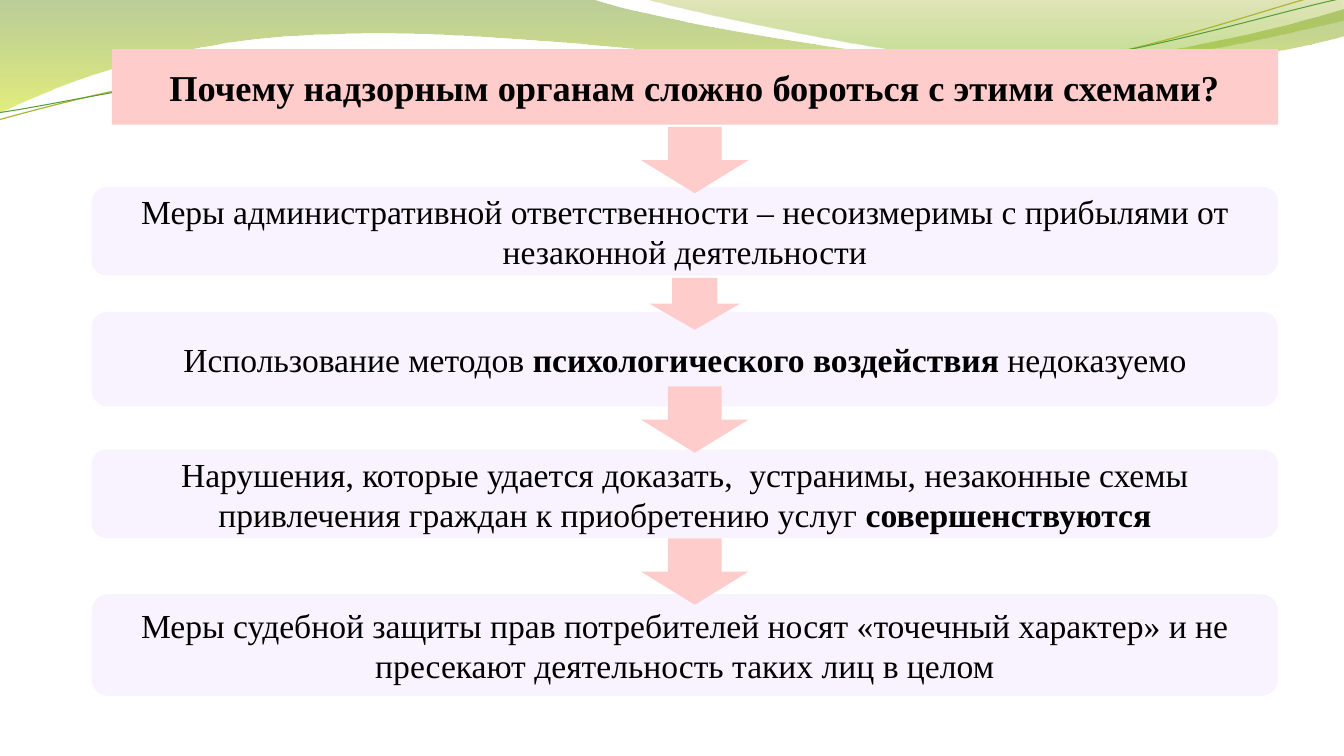
from dataclasses import dataclass

from lxml.etree import SubElement
from pptx import Presentation
from pptx.dml.color import RGBColor
from pptx.enum.shapes import MSO_SHAPE as Preset
from pptx.enum.text import MSO_ANCHOR as Anchor, PP_ALIGN as Align
from pptx.oxml.ns import qn
from pptx.shapes.autoshape import Shape
from pptx.slide import Slide
from pptx.util import Cm, Pt

COLORS = {
    "pink": "FFCCCC",
    "lilac": "F9F3FF",
    "text": "000000",
    "moss": "69921C",
    "lime": "CCE10F",
    "olive": "9BAA1A",
    "grass": "81BA16",
    "khaki_line": "A9B733",
    "green_line": "549E39",
}
FONT = "Times New Roman"
REASON_LEFT, REASON_WIDTH = 2.31, 29.9
ARROW_CENTER = 17.51

Point = tuple[float, float]
Segment = tuple[Point, ...]


@dataclass(frozen=True)
class Stop:
    color: str
    position: float
    opacity: int


@dataclass(frozen=True)
class Wave:
    """Outline in cm: one point makes a straight segment, three a cubic one."""
    start: Point
    segments: tuple[Segment, ...]
    stops: tuple[Stop, ...] = ()
    line: str = ""
    line_width: float = 0


@dataclass(frozen=True)
class Reason:
    """Runs alternate between regular and bold."""
    top: float
    height: float
    runs: tuple[str, ...]


@dataclass(frozen=True)
class Arrow:
    top: float
    width: float = 2.71
    height: float = 1.67


WAVES = (
    Wave((-0.05, 0), (
        ((14.91, -0.03),),
        ((16.1, 0.43), (22.45, 1.6), (25.68, 1.6)),
        ((28.88, 1.6), (32.44, 0.66), (33.87, 0.23)),
        ((33.88, 0.91),),
        ((33.3, 1.12), (29.44, 1.93), (25.25, 1.91)),
        ((21.06, 1.91), (12.93, 0.71), (8.71, 0.86)),
        ((4.37, 0.91), (1.55, 2.11), (-0.05, 2.87)),
    ), stops=(Stop("moss", 0, 45), Stop("lime", 1, 55))),
    Wave((16.2, -0.03), (
        ((17.25, 0.28), (23.09, 1.57), (26.04, 1.65)),
        ((28.96, 1.75), (32.56, 0.81), (33.87, 0.53)),
        ((33.87, 0),),
    ), stops=(Stop("olive", 0, 30), Stop("grass", 0.8, 45))),
    Wave((-0.03, 3.02), (
        ((1.6, 2.57), (5.33, 1.57), (9.37, 1.4)),
        ((13.39, 1.22), (20.04, 2.21), (24.1, 1.93)),
        ((28.19, 1.68), (31.78, 0.2), (33.78, -0.25)),
    ), line="khaki_line", line_width=0.85),
    Wave((-0.03, 2.84), (
        ((1.57, 2.62), (5.54, 1.68), (9.58, 1.5)),
        ((13.64, 1.35), (20.22, 2.08), (24.26, 1.83)),
        ((28.3, 1.57), (31.88, 0.36), (33.87, -0.05)),
    ), line="green_line", line_width=0.75),
)
REASONS = (
    Reason(4.72, 2.22, (
        "Меры административной ответственности – несоизмеримы с прибылями от "
        "незаконной деятельности",)),
    Reason(7.86, 2.38, (
        "Использование методов ", "психологического воздействия ", "недоказуемо")),
    Reason(11.33, 2.23, (
        "Нарушения, которые удается доказать,  устранимы, незаконные схемы "
        "привлечения граждан к приобретению услуг ", "совершенствуются")),
    Reason(14.97, 2.57, (
        "Меры судебной защиты прав потребителей носят «точечный характер» и не "
        "пресекают деятельность таких лиц в целом",)),
)
ARROWS = (Arrow(3.2), Arrow(7, 2.28, 1.31), Arrow(9.74), Arrow(13.57))


def rgb(name: str) -> RGBColor:
    return RGBColor.from_string(COLORS[name])


def curve_segments(shape: Shape, segments: tuple[Segment, ...]) -> None:
    """Join every three points of a cubic segment into one Bézier curve."""
    nodes = iter(list(shape.element.spPr.iter(qn("a:lnTo"))))
    for segment in segments:
        first, *others = [next(nodes) for _ in segment]
        if others:
            first.tag = qn("a:cubicBezTo")
        for node in others:
            first.append(node[0])
            node.getparent().remove(node)


def fill_gradient(shape: Shape, stops: tuple[Stop, ...]) -> None:
    """Fill from top to bottom with partly transparent colours."""
    shape.fill.gradient()
    shape.fill.gradient_angle = 270
    for target, stop in zip(shape.fill.gradient_stops, stops):
        target.color.rgb = rgb(stop.color)
        target.position = stop.position
    for color, stop in zip(shape.element.spPr.iter(qn("a:srgbClr")), stops):
        SubElement(color, qn("a:alpha")).set("val", str(stop.opacity * 1000))


def draw_wave(slide: Slide, wave: Wave) -> Shape:
    points = [wave.start, *(point for segment in wave.segments for point in segment)]
    first, *rest = [(Cm(x), Cm(y)) for x, y in points]
    builder = slide.shapes.build_freeform(*first)
    builder.add_line_segments(rest, close=bool(wave.stops))
    shape = builder.convert_to_shape()
    curve_segments(shape, wave.segments)
    shape.shadow.inherit = False
    if wave.stops:
        fill_gradient(shape, wave.stops)
        shape.line.fill.background()
    else:
        shape.fill.background()
        shape.line.color.rgb = rgb(wave.line)
        shape.line.width = Pt(wave.line_width)
    return shape


def decorate_master(slide: Slide) -> None:
    """Put the waves on the slide master, behind its placeholders."""
    master_tree = slide.slide_layout.slide_master.shapes.element
    for index, wave in enumerate(WAVES, start=2):
        master_tree.insert(index, draw_wave(slide, wave).element)


def fill_plain(shape: Shape, color: str) -> None:
    shape.fill.solid()
    shape.fill.fore_color.rgb = rgb(color)
    shape.line.fill.background()


def format_text(shape: Shape, size: float, bold_pattern: tuple[bool, bool]) -> None:
    """Style the runs, taking bold from the pattern in turn."""
    frame = shape.text_frame
    frame.word_wrap = True
    frame.vertical_anchor = Anchor.MIDDLE
    paragraph = frame.paragraphs[0]
    paragraph.alignment = Align.CENTER
    for index, run in enumerate(paragraph.runs):
        run.font.name = FONT
        run.font.size = Pt(size)
        run.font.bold = bold_pattern[index % 2]
        run.font.color.rgb = rgb("text")


def place_title(slide: Slide) -> None:
    title = slide.shapes.title
    title.left, title.top, title.width, title.height = Cm(2.82), Cm(1.24), Cm(29.39), Cm(1.9)
    fill_plain(title, "pink")
    title.text_frame.text = "Почему надзорным органам сложно бороться с этими схемами?"
    format_text(title, 26, (True, True))


def draw_reason(slide: Slide, reason: Reason) -> None:
    box = slide.shapes.add_shape(Preset.ROUNDED_RECTANGLE, Cm(REASON_LEFT), Cm(reason.top),
                                 Cm(REASON_WIDTH), Cm(reason.height))
    box.shadow.inherit = False
    fill_plain(box, "lilac")
    for text in reason.runs:
        box.text_frame.paragraphs[0].add_run().text = text
    format_text(box, 24, (False, True))


def draw_arrow(slide: Slide, arrow: Arrow) -> None:
    shape = slide.shapes.add_shape(Preset.DOWN_ARROW, Cm(ARROW_CENTER - arrow.width / 2),
                                   Cm(arrow.top), Cm(arrow.width), Cm(arrow.height))
    shape.shadow.inherit = False
    fill_plain(shape, "pink")


def main() -> None:
    deck = Presentation()
    deck.slide_width, deck.slide_height = Cm(33.87), Cm(19.05)
    slide = deck.slides.add_slide(deck.slide_layouts[5])
    decorate_master(slide)
    place_title(slide)
    for reason in REASONS:
        draw_reason(slide, reason)
    for arrow in ARROWS:
        draw_arrow(slide, arrow)
    deck.save("out.pptx")


if __name__ == "__main__":
    main()
